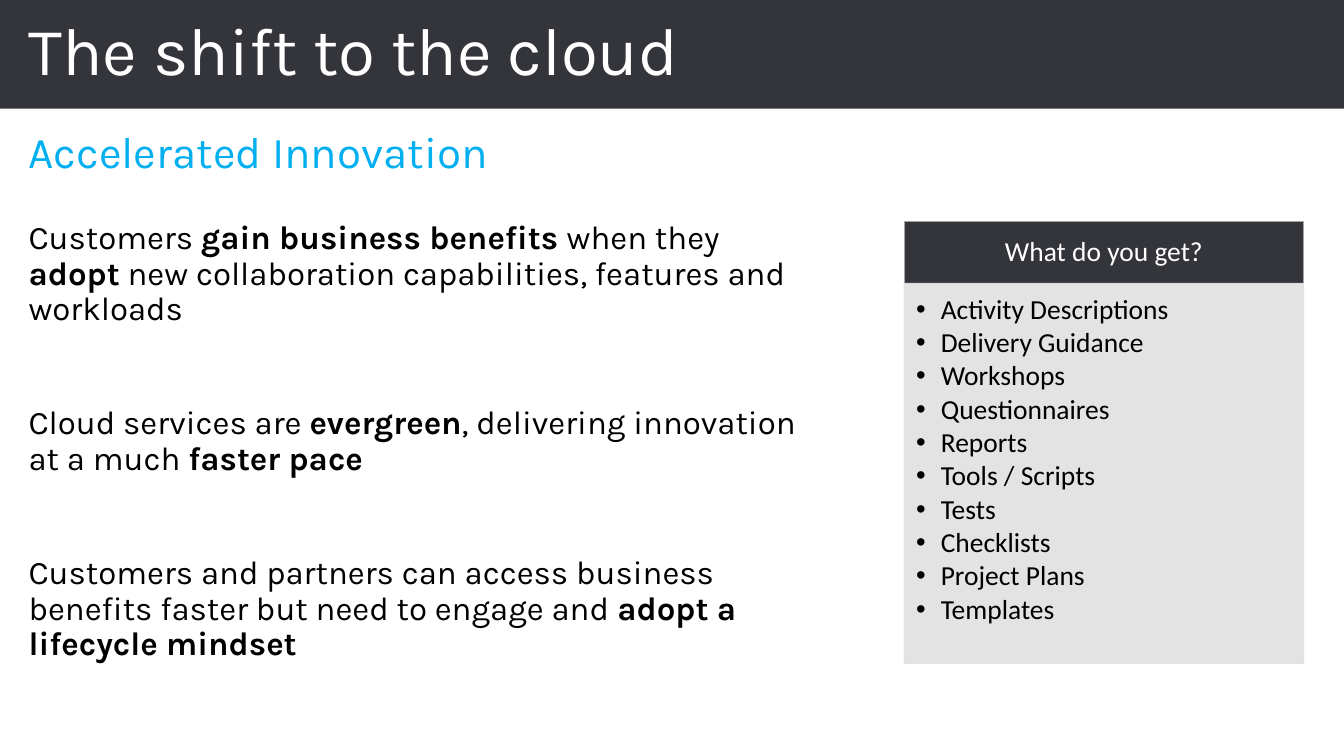
from dataclasses import dataclass

from lxml.etree import SubElement
from pptx import Presentation
from pptx.dml.color import RGBColor
from pptx.enum.shapes import MSO_SHAPE as Shape
from pptx.enum.text import MSO_ANCHOR as Anchor, MSO_AUTO_SIZE as AutoSize, PP_ALIGN as Align
from pptx.oxml.ns import qn
from pptx.util import Inches, Pt

DARK = RGBColor(0x33, 0x35, 0x3A)
WHITE = RGBColor(0xFF, 0xFF, 0xFF)
BLACK = RGBColor(0x00, 0x00, 0x00)
CYAN = RGBColor(0x00, 0xAF, 0xF0)
GREY = RGBColor(0xA5, 0xA5, 0xA5)
LIGHT = RGBColor(0xE1, 0xE1, 0xE1)
WIDTH, HEIGHT = Inches(13.6), Inches(7.65)


@dataclass(frozen=True)
class Area:
    left: float
    top: float
    width: float
    height: float

    def place(self) -> dict[str, int]:
        return {
            "left": int(WIDTH * self.left / 100),
            "top": int(HEIGHT * self.top / 100),
            "width": int(WIDTH * self.width / 100),
            "height": int(HEIGHT * self.height / 100),
        }


@dataclass(frozen=True)
class Panel:
    area: Area
    fill: RGBColor
    line: RGBColor | None = None
    opacity: int = 100


@dataclass(frozen=True)
class Style:
    font: str
    size: float
    color: RGBColor
    align: Align = Align.LEFT
    before: float = 0
    after: float = 0


@dataclass(frozen=True)
class Para:
    runs: tuple[str, ...]
    style: Style


BAR = Panel(Area(0, 0, 100, 14.38), DARK)
TITLE = Area(1.4, 0.92, 96.4, 12.29)
BODY = Area(1.4, 16.6, 59.34, 81.05)
HEAD = Panel(Area(67.28, 29.28, 29.71, 8.24), DARK, GREY)
LIST = Panel(Area(67.28, 37.52, 29.71, 50.2), LIGHT, LIGHT, 90)

TITLE_STYLE = Style("Karla", 49, WHITE)
HEAD_STYLE = Style("Calibri", 20, WHITE, Align.CENTER)
ITEM_STYLE = Style("Calibri", 20, BLACK, after=2.7)
LEAD_STYLE = Style("Karla", 32, CYAN, before=10.2)
FIRST_STYLE = Style("Karla", 24, BLACK, before=31.6)
NEXT_STYLE = Style("Karla", 24, BLACK, before=57.2)

STORY = [
    Para(("Accelerated Innovation",), LEAD_STYLE),
    Para(("Customers ", "gain business benefits ", "when they ", "adopt",
          " new collaboration capabilities, features and workloads"), FIRST_STYLE),
    Para(("Cloud services are ", "evergreen", ", delivering innovation at a much ",
          "faster pace"), NEXT_STYLE),
    Para(("Customers and partners can access business benefits faster but need to engage and ",
          "adopt a lifecycle mindset"), NEXT_STYLE),
]
ITEMS = ["Activity Descriptions", "Delivery Guidance", "Workshops", "Questionnaires", "Reports",
         "Tools / Scripts", "Tests", "Checklists", "Project Plans", "Templates"]


def apply(target, values: dict) -> None:
    for name, value in values.items():
        setattr(target, name, value)


def add_panel(s, panel: Panel):
    sp = s.shapes.add_shape(Shape.RECTANGLE, **panel.area.place())
    sp.shadow.inherit = False
    sp.fill.solid()
    sp.fill.fore_color.rgb = panel.fill
    if panel.line is None:
        sp.line.fill.background()
    else:
        sp.line.color.rgb = panel.line
        sp.line.width = Pt(1)
    if panel.opacity < 100:
        for clr in sp._element.spPr.iter(qn("a:srgbClr")):
            SubElement(clr, qn("a:alpha"), val=str(panel.opacity * 1000))
    return sp


def write(sp, paras: list[Para], anchor: Anchor, insets: tuple[float, ...]) -> None:
    tf = sp.text_frame
    left, top, right, bottom = map(Inches, insets)
    apply(tf, {"word_wrap": True, "auto_size": AutoSize.NONE, "vertical_anchor": anchor,
               "margin_left": left, "margin_top": top,
               "margin_right": right, "margin_bottom": bottom})
    for i, para in enumerate(paras):
        p = tf.add_paragraph() if i else tf.paragraphs[0]
        style = para.style
        apply(p, {"alignment": style.align, "line_spacing": 0.9,
                  "space_before": Pt(style.before), "space_after": Pt(style.after)})
        for j, text in enumerate(para.runs):
            r = p.add_run()
            r.text = text
            apply(r.font, {"name": style.font, "size": Pt(style.size), "bold": j % 2 == 1})
            r.font.color.rgb = style.color


def add_bullets(sp) -> None:
    for p in sp.text_frame.paragraphs:
        pPr = p._p.get_or_add_pPr()
        pPr.set("marL", str(Inches(0.25)))
        pPr.set("indent", str(Inches(-0.25)))
        SubElement(pPr, qn("a:buFont"), typeface="Arial")
        SubElement(pPr, qn("a:buChar"), char="•")


def main() -> None:
    prs = Presentation()
    apply(prs, {"slide_width": WIDTH, "slide_height": HEIGHT})
    s = prs.slides.add_slide(prs.slide_layouts.get_by_name("Title Only"))

    title = s.shapes.title
    bar = add_panel(s, BAR)
    title._element.addprevious(bar._element)
    apply(title, TITLE.place())
    write(title, [Para(("The shift to the cloud",), TITLE_STYLE)], Anchor.MIDDLE,
          (0.1, 0.05, 0.1, 0.05))

    head = add_panel(s, HEAD)
    write(head, [Para(("What do you get?",), HEAD_STYLE)], Anchor.MIDDLE,
          (0.16, 0.09, 0.16, 0.09))

    items = add_panel(s, LIST)
    write(items, [Para((item,), ITEM_STYLE) for item in ITEMS], Anchor.TOP,
          (0.12, 0.12, 0.16, 0.17))
    add_bullets(items)

    body = s.shapes.add_textbox(**BODY.place())
    write(body, STORY, Anchor.TOP, (0.1, 0.05, 0.1, 0.05))
    prs.save("out.pptx")


if __name__ == "__main__":
    main()
